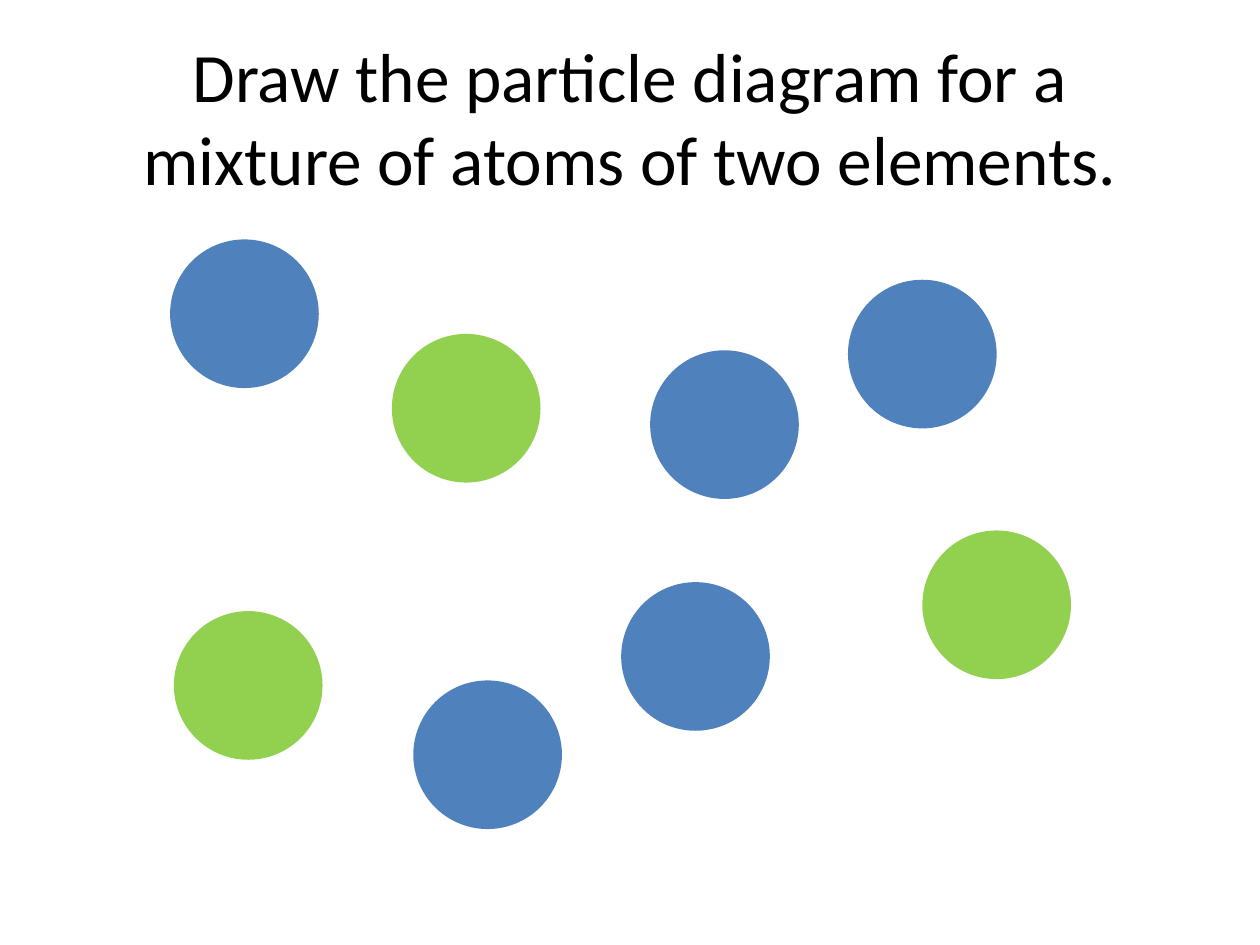
from pptx import Presentation
from pptx.dml.color import RGBColor
from pptx.enum.shapes import MSO_SHAPE as Shape
from pptx.enum.text import MSO_ANCHOR as Anchor, PP_ALIGN as Align
from pptx.util import Inches, Pt

BLACK = RGBColor(0x00, 0x00, 0x00)
BLUE = RGBColor(0x4F, 0x81, 0xBD)
GREEN = RGBColor(0x92, 0xD0, 0x50)

# Content: title and the atoms of each element (left, top in inches)
TITLE = "Draw the particle diagram for a mixture of atoms of two elements."
ATOMS = [
    (3.11, 2.65, GREEN),
    (4.93, 4.62, BLUE),
    (6.73, 2.22, BLUE),
    (1.38, 4.85, GREEN),
    (1.35, 1.90, BLUE),
    (5.16, 2.78, BLUE),
    (3.28, 5.40, BLUE),
    (7.32, 4.21, GREEN),
]
DIAMETER = Inches(1.18)

prs = Presentation()
prs.slide_width, prs.slide_height = Inches(10), Inches(7.5)
s = prs.slides.add_slide(prs.slide_layouts[6])

# Title, centred between equal side margins
margin = int(prs.slide_width * 0.05)
sp = s.shapes.add_textbox(margin, int(prs.slide_height * 0.04),
                          prs.slide_width - 2 * margin, Inches(1.25))
tf = sp.text_frame
tf.word_wrap = True
tf.vertical_anchor = Anchor.MIDDLE
p = tf.paragraphs[0]
p.text = TITLE
p.alignment = Align.CENTER
p.font.name = "Calibri"
p.font.size = Pt(39.6)
p.font.color.rgb = BLACK

# Atoms
for left, top, color in ATOMS:
    sp = s.shapes.add_shape(Shape.OVAL, Inches(left), Inches(top), DIAMETER, DIAMETER)
    sp.shadow.inherit = False
    sp.fill.solid()
    sp.fill.fore_color.rgb = color
    sp.line.fill.background()

prs.save("out.pptx")
